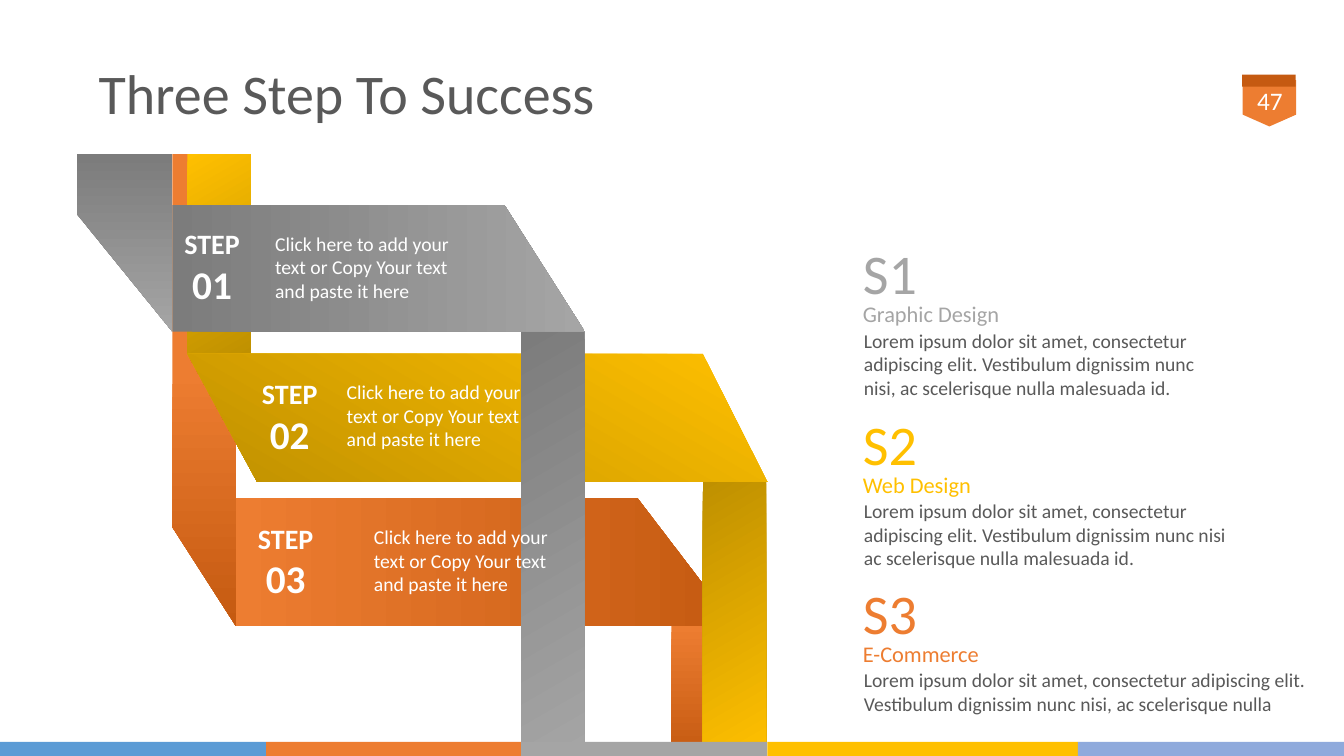
"""Build the slide of three folded ribbons, one for each step to success."""
from pptx import Presentation
from pptx import util as u
from pptx.dml import color
from pptx.enum import shapes, text

FONT = "Calibri"
WHITE, DARK = "FFFFFF", "595959"
GREY, GOLD, ORANGE = "A5A5A5", "FFC000", "ED7D31"
SLATE, BRONZE, RUST = "7C7C7C", "BF9000", "C55A11"

TITLE = "Three Step To Success"
PAGE = "47"
HINT = ["Click here to add your", "text or Copy Your text", "and paste it here"]

# outline (left, top, width, height) or corner points; colours; angle; first stop
RIBBONS = [
    ([(1.71, 1.53), (2.34, 1.53), (2.34, 6.21), (1.71, 5.23)], (ORANGE, RUST), 90, 0.46),
    ([(2.34, 4.94), (6.32, 4.94), (7.29, 6.21), (2.34, 6.21)], (ORANGE, RUST), 0, 0),
    ((6.66, 6.21, 0.63, 1.29), (ORANGE, RUST), 90, 0),
    ((6.97, 4.78, 0.63, 2.72), (BRONZE, GOLD), 60, 0),
    ((1.86, 1.53, 0.63, 1.99), (GOLD, BRONZE), 60, 0),
    ([(1.86, 3.51), (6.97, 3.51), (7.61, 4.78), (2.55, 4.78)], (GOLD, BRONZE), 120, 0),
    ((5.17, 3.29, 0.63, 4.21), (SLATE, GREY), 60, 0),
    ([(0.76, 1.53), (1.71, 1.53), (1.71, 3.29), (0.76, 2.12)], (SLATE, GREY), 90, 0),
    ([(1.71, 2.03), (5, 2.03), (5.8, 3.29), (1.71, 3.29)], (SLATE, GREY), 0, 0),
]
STEPS = [("01", 1.73, 2.2, 2.63, 2.25), ("02", 2.5, 3.69, 3.34, 3.72),
         ("03", 2.46, 5.12, 3.61, 5.16)]
EDGES = [0, 2.64, 5.17, 7.61, 10.69, 13.33]
BARS = ["5B9BD5", ORANGE, GREY, GOLD, "8FAADC"]
LOREM = "Lorem ipsum dolor sit amet, consectetur adipiscing elit. Vestibulum dignissim nunc nisi"
NOTES = [
    ("S1", "Graphic Design", LOREM + ", ac scelerisque nulla malesuada id.", GREY, 2.32, 1.61, 3.56),
    ("S2", "Web Design", LOREM + " ac scelerisque nulla malesuada id.", GOLD, 4.01, 1.29, 3.99),
    ("S3", "E-Commerce", LOREM + ", ac scelerisque nulla", ORANGE, 5.69, 1.4, 4.74),
]

deck = Presentation()
deck.slide_width, deck.slide_height = u.Inches(13.33), u.Inches(7.5)
slide = deck.slides.add_slide(deck.slide_layouts[6])


def rgb(code):
    return color.RGBColor.from_string(code)


def plain(shape):
    shape.shadow.inherit = False
    shape.line.fill.background()
    return shape


def block(box, fill=None, kind=shapes.MSO_SHAPE.RECTANGLE):
    shape = plain(slide.shapes.add_shape(kind, *map(u.Inches, box)))
    if fill:
        shape.fill.solid()
        shape.fill.fore_color.rgb = rgb(fill)
    return shape


def fold(points):
    first, *rest = [(u.Inches(x), u.Inches(y)) for x, y in points]
    pen = slide.shapes.build_freeform(*first, scale=1.0)
    pen.add_line_segments(rest, close=True)
    return plain(pen.convert_to_shape())


def shade(shape, tones, angle, start):
    shape.fill.gradient()
    shape.fill.gradient_angle = (360 - angle) % 360
    for stop, tone, place in zip(shape.fill.gradient_stops, tones, (start, 1)):
        stop.color.rgb = rgb(tone)
        stop.position = place


def write(box, lines, ink, wrap=False, grow=True, bold=False):
    frame = slide.shapes.add_textbox(*map(u.Inches, box)).text_frame
    frame.word_wrap = wrap
    if grow:
        frame.auto_size = text.MSO_AUTO_SIZE.SHAPE_TO_FIT_TEXT
    else:
        frame.vertical_anchor = text.MSO_ANCHOR.MIDDLE
    for i, (words, size, align) in enumerate(lines):
        para = frame.add_paragraph() if i else frame.paragraphs[0]
        para.text, para.alignment = words, align
        font = para.font
        font.name, font.size, font.bold = FONT, u.Pt(size), bold
        font.color.rgb = rgb(ink)
    return frame


LEFT, MID = text.PP_ALIGN.LEFT, text.PP_ALIGN.CENTER

badge = block((12.36, 0.76, 0.46, 0.53), ORANGE, shapes.MSO_SHAPE.PENTAGON)
badge.rotation = 90
badge.adjustments[0] = 0.255
block((12.32, 0.74, 0.53, 0.12), RUST)
head = write((0.88, 0.56, 11.7, 0.8), [(TITLE, 40, LEFT)], DARK, wrap=True, grow=False)
head.paragraphs[0].line_spacing = 0.9
write((12.29, 0.74, 0.61, 0.52), [(PAGE, 18, MID)], WHITE, wrap=True, grow=False)

for outline, tones, angle, start in RIBBONS:
    shape = fold(outline) if isinstance(outline, list) else block(outline)
    shade(shape, tones, angle, start)

for left, right, fill in zip(EDGES, EDGES[1:], BARS):
    block((left, 7.36, right - left, 0.14), fill)

for num, x, y, hint_x, hint_y in STEPS:
    write((x, y, 0.89, 0.91), [("STEP", 20, LEFT), (num, 28, MID)], WHITE, bold=True)
    write((hint_x, hint_y, 1.99, 0.81), [(line, 14, LEFT) for line in HINT], WHITE)

for code, name, body, ink, top, name_w, body_w in NOTES:
    write((8.46, top, 0.78, 0.77), [(code, 40, LEFT)], ink)
    write((8.46, top + 0.61, name_w, 0.37), [(name, 16, LEFT)], ink)
    write((8.47, top + 0.89, body_w, 0.81), [(body, 14, LEFT)], DARK, wrap=True)

deck.save("out.pptx")
